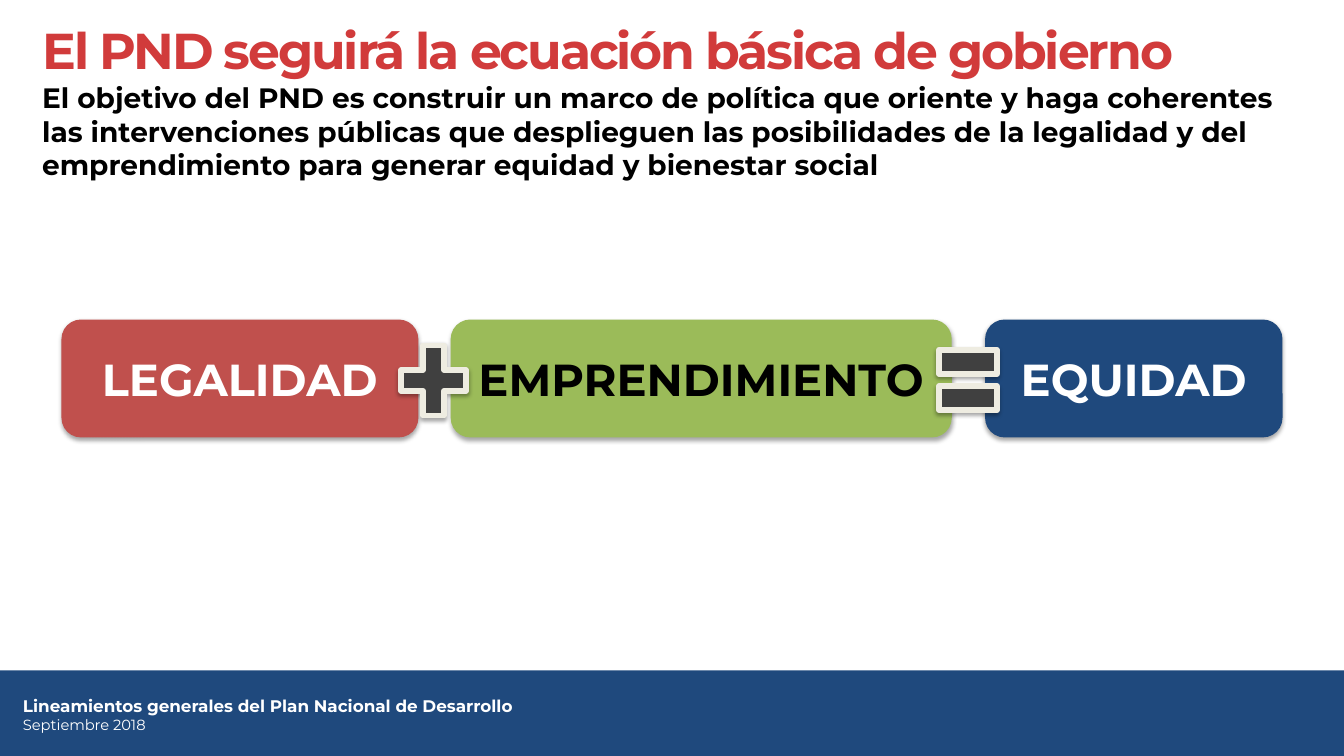
from lxml import etree
from pptx import Presentation
from pptx.dml.color import RGBColor
from pptx.enum.shapes import MSO_SHAPE as SHAPE
from pptx.enum.text import MSO_ANCHOR as ANCHOR, MSO_AUTO_SIZE as AUTO, PP_ALIGN as ALIGN
from pptx.oxml.ns import qn
from pptx.util import Inches, Pt

NAVY, WHITE, BLACK = "1F497D", "FFFFFF", "000000"
TITLE = "El PND seguirá la ecuación básica de gobierno"
OBJECTIVE = ("El objetivo del PND es construir un marco de política que oriente y haga "
             "coherentes las intervenciones públicas que desplieguen las posibilidades de "
             "la legalidad y del emprendimiento para generar equidad y bienestar social")
# Text, left offset, width, fill, text colour
TERMS = [("LEGALIDAD", 0, 3.54, "C0504D", WHITE),
         ("EMPRENDIMIENTO", 3.86, 4.97, "9BBB59", BLACK),
         ("EQUIDAD", 9.16, 2.95, NAVY, WHITE)]
# Preset, left and top offsets, width, height, adjustments
SIGNS = [(SHAPE.MATH_PLUS, 3.25, 0.13, 0.88, 0.95, [0.235]),
         (SHAPE.MATH_EQUAL, 8.6, 0.09, 0.78, 1.02, [0.235, 0.118])]


def color(value):
    return RGBColor.from_string(value)


def set_frame(tf, inset=0.05, anchor=ANCHOR.TOP):
    frame = {"word_wrap": True, "auto_size": AUTO.NONE, "vertical_anchor": anchor,
             "margin_left": Inches(0.1), "margin_right": Inches(0.1),
             "margin_top": Inches(inset), "margin_bottom": Inches(inset)}
    for name, value in frame.items():
        setattr(tf, name, value)


def write(p, text, size, ink, bold=True, align=ALIGN.LEFT):
    p.alignment = align
    r = p.add_run()
    r.text = text
    for name, value in {"name": "Montserrat", "size": Pt(size), "bold": bold}.items():
        setattr(r.font, name, value)
    r.font.color.rgb = color(ink)
    return r


def add_shape(s, preset, box, fill, shadow=True):
    sp = s.shapes.add_shape(preset, *map(Inches, box))
    sp.fill.solid()
    sp.fill.fore_color.rgb = color(fill)
    sp.line.fill.background()
    sp.shadow.inherit = False
    if shadow:
        effects = sp._element.spPr.find(qn("a:effectLst"))
        outer = etree.SubElement(effects, qn("a:outerShdw"), blurRad=str(Pt(3.1)),
                                 dist=str(Pt(1.8)), dir="5400000", rotWithShape="0")
        tint = etree.SubElement(outer, qn("a:srgbClr"), val=BLACK)
        etree.SubElement(tint, qn("a:alpha"), val="35000")
    return sp


def add_footer(s, left, top, width, height):
    add_shape(s, SHAPE.RECTANGLE, (left, top, width, height), NAVY, shadow=False)
    box = (left + 0.13, top + 0.15, 8.16, 0.55)
    tf = s.shapes.add_textbox(*map(Inches, box)).text_frame
    set_frame(tf, inset=0.1)
    write(tf.paragraphs[0], "Lineamientos generales del Plan Nacional de Desarrollo", 12, WHITE)
    write(tf.add_paragraph(), "Septiembre 2018", 10.5, WHITE, bold=False)


def add_heading(s, left, top, width):
    # Title
    title = s.shapes.title
    place = {"left": left, "top": top, "width": width, "height": 0.61}
    for name, value in place.items():
        setattr(title, name, Inches(value))
    set_frame(title.text_frame)
    p = title.text_frame.paragraphs[0]
    p.line_spacing = 0.9
    r = write(p, TITLE, 36, "D13B3B")
    r.font._element.set("spc", "-150")
    # Objective
    box = (left, top + 0.54, width, 0.39)
    tf = s.shapes.add_textbox(*map(Inches, box)).text_frame
    set_frame(tf)
    write(tf.paragraphs[0], OBJECTIVE, 20, BLACK)


def add_equation(s, left, top, height):
    # Terms
    for text, dx, width, fill, ink in TERMS:
        sp = add_shape(s, SHAPE.ROUNDED_RECTANGLE, (left + dx, top, width, height), fill)
        set_frame(sp.text_frame, anchor=ANCHOR.MIDDLE)
        write(sp.text_frame.paragraphs[0], text, 32, ink, align=ALIGN.CENTER)
    # Signs between the terms
    for preset, dx, dy, width, sign_height, adjustments in SIGNS:
        sp = add_shape(s, preset, (left + dx, top + dy, width, sign_height), "404040")
        for i, value in enumerate(adjustments):
            sp.adjustments[i] = value
        sp.line.color.rgb = color("EEECE1")
        sp.line.width = Pt(4)


def main():
    prs = Presentation()
    prs.slide_width, prs.slide_height = Inches(13.33), Inches(7.5)
    s = prs.slides.add_slide(prs.slide_layouts[5])
    add_footer(s, 0, 6.65, 13.33, 0.85)
    add_heading(s, 0.32, 0.21, 12.7)
    add_equation(s, 0.61, 3.17, 1.17)
    prs.save("out.pptx")


if __name__ == "__main__":
    main()
